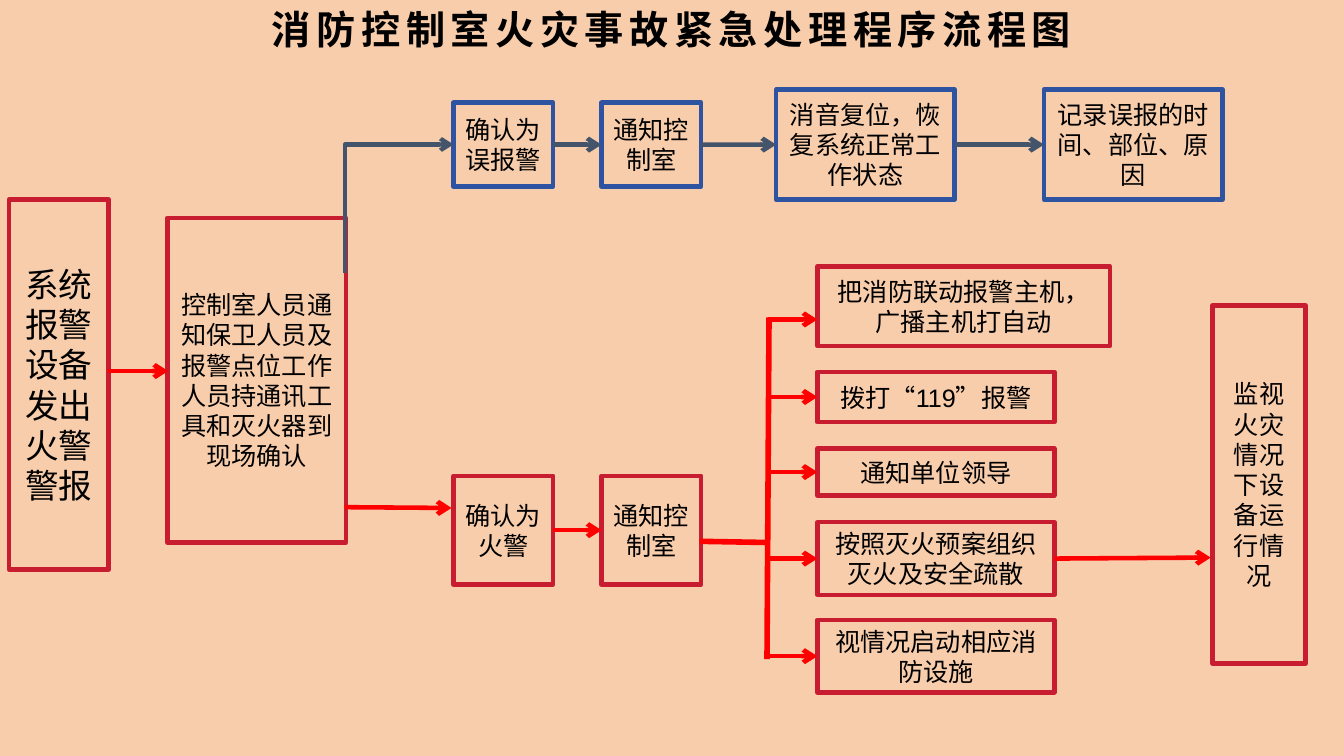
from lxml import etree
from pptx import Presentation
from pptx.dml.color import RGBColor
from pptx.enum.shapes import MSO_CONNECTOR, MSO_SHAPE
from pptx.enum.text import MSO_ANCHOR, PP_ALIGN
from pptx.oxml.ns import qn
from pptx.util import Cm, Pt

RECT = MSO_SHAPE.RECTANGLE
STRAIGHT, ELBOW = MSO_CONNECTOR.STRAIGHT, MSO_CONNECTOR.ELBOW
MIDDLE, CENTER = MSO_ANCHOR.MIDDLE, PP_ALIGN.CENTER
PEACH = RGBColor(0xF8, 0xCD, 0xAC)
CRIMSON = RGBColor(0xC8, 0x1D, 0x31)
BLUE = RGBColor(0x2E, 0x54, 0xA1)
SLATE = RGBColor(0x44, 0x54, 0x6A)
RED = RGBColor(0xFF, 0, 0)
BLACK = RGBColor(0, 0, 0)
LEFT, RIGHT = 1, 3

TITLE = "消防控制室火灾事故紧急处理程序流程图"
BOXES = {
    "alarm": ("系统报警设备发出火警警报", 0.23, 5.03, 2.51, 9.32, CRIMSON, 24),
    "check": ("控制室人员通知保卫人员及报警点位工作人员持通讯工具和灭火器到现场确认",
              4.22, 5.49, 4.5, 8.18, CRIMSON, 18),
    "false": ("确认为误报警", 11.43, 2.59, 2.51, 2.11, BLUE, 18),
    "inform": ("通知控制室", 15.16, 2.59, 2.51, 2.11, BLUE, 18),
    "reset": ("消音复位，恢复系统正常工作状态", 19.56, 2.26, 4.5, 2.77, BLUE, 18),
    "record": ("记录误报的时间、部位、原因", 26.31, 2.26, 4.5, 2.77, BLUE, 18),
    "fire": ("确认为火警", 11.43, 11.99, 2.51, 2.74, CRIMSON, 18),
    "warn": ("通知控制室", 15.16, 11.99, 2.51, 2.74, CRIMSON, 18),
    "watch": ("监视火灾情况下设备运行情况", 30.56, 7.7, 2.34, 9.02, CRIMSON, 18),
}
ACTIONS = [
    ("把消防联动报警主机，广播主机打自动", 6.71, 7.37, 2.01),
    ("拨打“119”报警", 9.37, 5.97, 1.27),
    ("通知单位领导", 11.3, 5.97, 1.19),
    ("按照灭火预案组织灭火及安全疏散", 13.16, 5.97, 1.83),
    ("视情况启动相应消防设施", 15.62, 5.97, 1.83),
]
ACTION_X, BUS_X = 20.6, 19.35
JOINS = [("false", "inform", SLATE), ("inform", "reset", SLATE),
         ("reset", "record", SLATE), ("fire", "warn", RED)]
ARROWS = [(2.72, 9.35, 4.24, 9.35), (8.69, 12.78, 11.38, 12.8),
          (BUS_X, 8.05, ACTION_X, 8.05)]
BARS = [(19.33, 16.61, 19.38, 8), (17.63, 13.64, 19.33, 13.67)]
TURN = (8.69, 6.88, 11.43, 3.64)

deck = Presentation()
deck.slide_width, deck.slide_height = Cm(33.87), Cm(19.05)
slide = deck.slides.add_slide(deck.slide_layouts[6])
slide.background.fill.solid()
slide.background.fill.fore_color.rgb = PEACH


def write(shape, text, size):
    frame = shape.text_frame
    frame.word_wrap = True
    para = frame.paragraphs[0]
    para.text = text
    para.alignment = CENTER
    para.font.size = Pt(size)
    para.font.name = "Arial"
    para.font.color.rgb = BLACK
    return para


def add_box(text, x, y, w, h, color, size):
    box = slide.shapes.add_shape(RECT, Cm(x), Cm(y), Cm(w), Cm(h))
    box.shadow.inherit = False
    box.fill.background()
    box.line.color.rgb = color
    box.line.width = Pt(3.25)
    box.text_frame.vertical_anchor = MIDDLE
    write(box, text, size)
    return box


def add_line(ends, color=RED, width=3.25, arrow=True, kind=STRAIGHT):
    line = slide.shapes.add_connector(kind, *(Cm(end) for end in ends))
    line.line.color.rgb = color
    line.line.width = Pt(width)
    props = line._element.spPr
    if arrow:
        etree.SubElement(props.find(qn("a:ln")), qn("a:tailEnd"), type="arrow")
    etree.SubElement(props, qn("a:effectLst"))
    return line


def add_turn(x1, y1, x2, y2):
    rise, run = y1 - y2, x2 - x1
    left = (x1 + x2 - rise) / 2
    top = (y1 + y2 - run) / 2
    turn = add_line((left, top, left + rise, top + run), SLATE, 3, kind=ELBOW)
    props = turn._element.spPr
    props.find(qn("a:xfrm")).set("rot", "16200000")
    props.find(qn("a:prstGeom")).set("prst", "bentConnector2")


title = slide.shapes.add_textbox(Cm(5.64), 0, Cm(22.58), Cm(1.45))
head = write(title, TITLE, 28)
head.font.bold = True
head.runs[0].font._element.set("spc", "400")

boxes = {name: add_box(*box) for name, box in BOXES.items()}
actions = [add_box(text, ACTION_X, y, w, h, CRIMSON, 18)
           for text, y, w, h in ACTIONS]

add_turn(*TURN)
for start, end, color in JOINS:
    join = add_line((0, 0, 1, 1), color)
    join.begin_connect(boxes[start], RIGHT)
    join.end_connect(boxes[end], LEFT)
for ends in ARROWS:
    add_line(ends)
for (text, y, w, h), action in zip(ACTIONS[1:], actions[1:]):
    mid = y + h / 2
    add_line((BUS_X, mid, ACTION_X, mid)).end_connect(action, LEFT)
add_line((26.57, 14.07, 30.51, 14.05)).begin_connect(actions[3], RIGHT)
for ends in BARS:
    add_line(ends, width=4, arrow=False)

deck.save("out.pptx")
